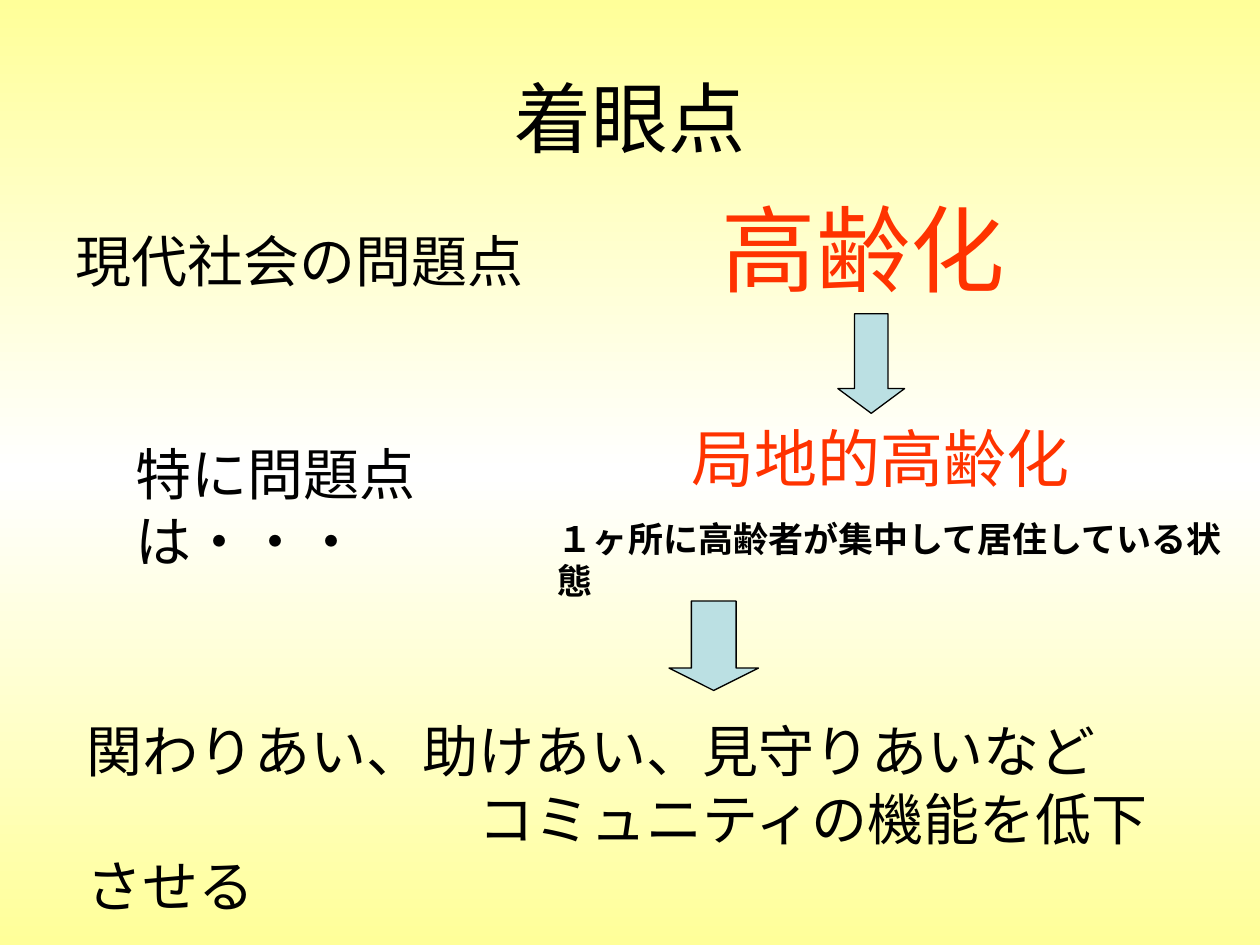
from copy import deepcopy

from pptx import Presentation
from pptx.dml.color import RGBColor
from pptx.enum import shapes, text
from pptx.util import Inches, Pt


def rgb(value):
    return RGBColor.from_string(value)


def add_text(content, box, size=32, color="000000", bold=False, wrap=True,
             align=text.PP_ALIGN.LEFT, anchor=text.MSO_ANCHOR.TOP,
             fit=text.MSO_AUTO_SIZE.NONE, indents=(0,)):
    sp = s.shapes.add_textbox(*map(Inches, box))
    tf = sp.text_frame
    tf.word_wrap = wrap
    tf.auto_size = fit
    tf.vertical_anchor = anchor
    tf.text = content
    for p, indent in zip(tf.paragraphs, indents):
        p.alignment = align
        p._p.get_or_add_pPr().set("indent", str(Inches(indent)))
        for r in p.runs:
            r.font.name = "Arial"
            r.font.size = Pt(size)
            r.font.bold = bold
            r.font.color.rgb = rgb(color)


prs = Presentation()
prs.slide_width = Inches(10)
prs.slide_height = Inches(7.5)
s = prs.slides.add_slide(prs.slide_layouts[6])

fill = s.background.fill
fill.gradient()
fill.gradient_angle = 90
gs_list = s._element.xpath(".//a:gsLst")[0]
gs_list.insert(1, deepcopy(gs_list[0]))
stops = [(0, "FFFF99"), (0.5, "FFFFFF"), (1, "FFFF99")]
for stop, (position, color) in zip(fill.gradient_stops, stops):
    stop.position = position
    stop.color.rgb = rgb(color)

grow = text.MSO_AUTO_SIZE.SHAPE_TO_FIT_TEXT
add_text("着眼点", (0.5, 0.3, 9, 1.25), size=44,
         align=text.PP_ALIGN.CENTER, anchor=text.MSO_ANCHOR.MIDDLE)
add_text("現代社会の問題点", (0.5, 1.75, 9, 4.95))
add_text("高齢化", (5.63, 1.47, 2.84, 1), size=54, color="FF3300", fit=grow)
add_text("特に問題点は・・・", (0.98, 3.44, 3.51, 0.63), wrap=False, fit=grow)
add_text("局地的高齢化", (5.39, 3.28, 3.2, 0.7), size=36, color="FF3300",
         wrap=False, fit=grow)
add_text("１ヶ所に高齢者が集中して居住している状態", (4.33, 4.06, 5.67, 0.43),
         size=20, bold=True, fit=grow)
add_text("関わりあい、助けあい、見守りあいなど\nコミュニティの機能を低下させる",
         (0.59, 5.64, 9.06, 1.8), indents=(0, 3.11))

arrows = [((6.65, 2.49, 0.53, 0.79), 0.37), ((5.31, 4.77, 0.71, 0.71), 0.25)]
for box, head in arrows:
    sp = s.shapes.add_shape(shapes.MSO_SHAPE.DOWN_ARROW, *map(Inches, box))
    sp.adjustments[0] = 0.5
    sp.adjustments[1] = head
    sp.shadow.inherit = False
    sp.fill.solid()
    sp.fill.fore_color.rgb = rgb("BBE0E3")
    sp.line.color.rgb = rgb("000000")
    sp.line.width = Pt(0.75)

prs.save("out.pptx")
